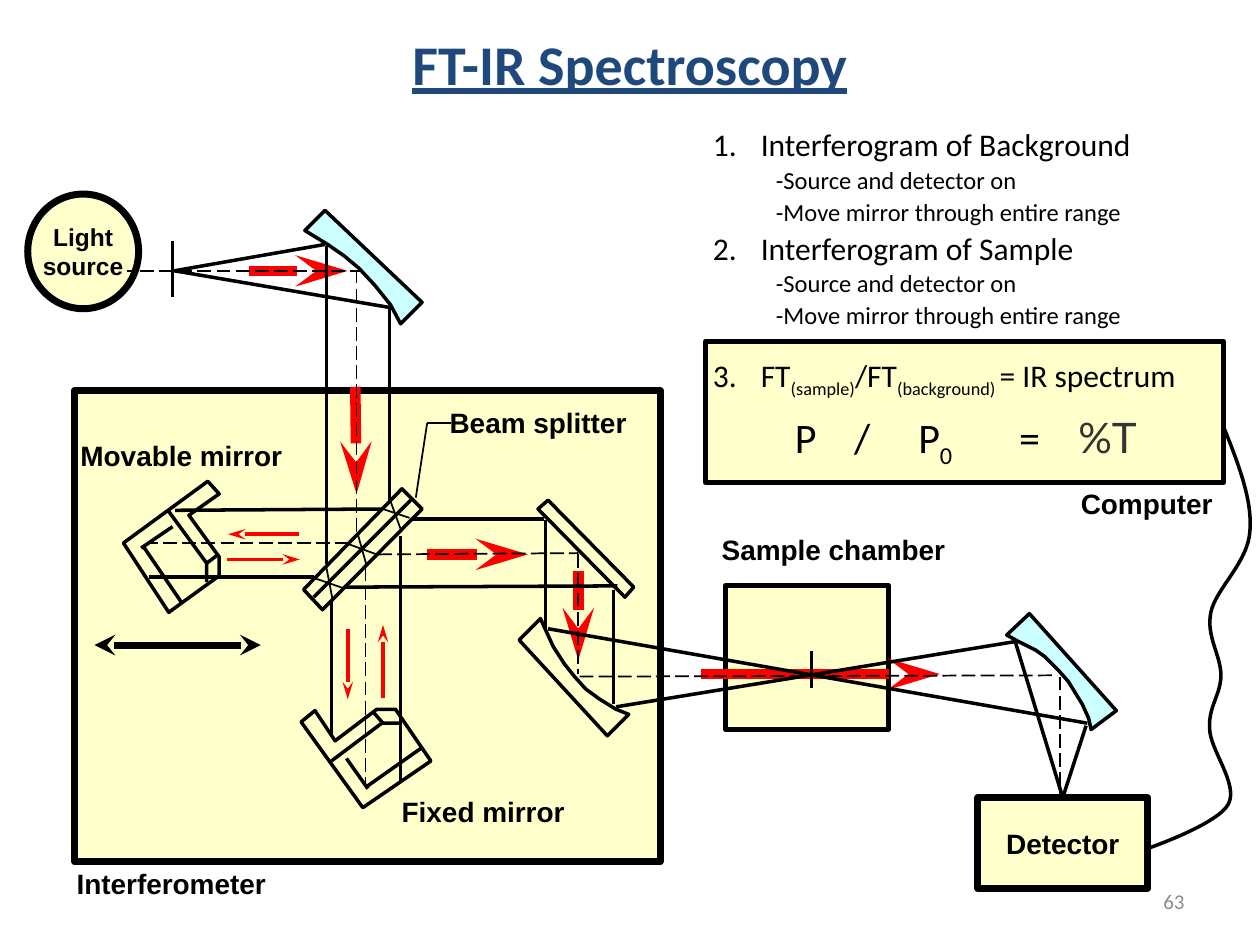
from pptx import Presentation
from pptx.dml.color import RGBColor
from pptx.enum.dml import MSO_LINE
from pptx.enum.shapes import MSO_CONNECTOR, MSO_SHAPE
from pptx.enum.text import MSO_ANCHOR, PP_ALIGN
from pptx.oxml.ns import qn
from pptx.util import Inches, Pt
from lxml import etree

STRAIGHT = MSO_CONNECTOR.STRAIGHT
RECTANGLE, OVAL = MSO_SHAPE.RECTANGLE, MSO_SHAPE.OVAL
LONG_DASH = MSO_LINE.LONG_DASH
MIDDLE, TOP = MSO_ANCHOR.MIDDLE, MSO_ANCHOR.TOP
LEFT, CENTER, RIGHT = PP_ALIGN.LEFT, PP_ALIGN.CENTER, PP_ALIGN.RIGHT
TITLE_ONLY = 5
COLUMNS = 1000  # square grid cells across the slide width

COLORS = {"ink": "000000", "title": "1F497D", "panel": "FFFFCC", "glass": "CCFFFF",
          "beam": "FF0000", "number": "8C8C8C", "percent": "333333"}


def add_text(paragraph, text, font="Calibri", size=18, color="ink", bold=False,
             underline=False, baseline=0):
    run = paragraph.add_run()
    run.text = text
    run.font.name, run.font.size = font, Pt(size)
    run.font.bold, run.font.underline = bold, underline
    run.font.color.rgb = RGBColor.from_string(COLORS[color])
    if baseline:
        run._r.get_or_add_rPr().set("baseline", str(baseline * 1000))


class Diagram:
    label_style = {"font": "Arial", "size": 16, "bold": True}

    def __init__(self, presentation):
        self.slide = presentation.slides.add_slide(presentation.slide_layouts[TITLE_ONLY])
        self.shapes = self.slide.shapes
        self.cell = presentation.slide_width // COLUMNS

    def grid(self, *cells):
        return [cell * self.cell for cell in cells]

    def outline(self, line, width, color="ink"):
        line.color.rgb = RGBColor.from_string(COLORS[color])
        line.width = Pt(width)

    def finish(self, shape, fill, width):
        shape.shadow.inherit = False
        if fill:
            shape.fill.solid()
            shape.fill.fore_color.rgb = RGBColor.from_string(COLORS[fill])
        else:
            shape.fill.background()
        self.outline(shape.line, width)
        return shape

    def title(self, text, box):
        shape = self.shapes.title
        shape.left, shape.top, shape.width, shape.height = self.grid(*box)
        shape.text_frame.vertical_anchor = MIDDLE
        paragraph = shape.text_frame.paragraphs[0]
        paragraph.alignment = CENTER
        add_text(paragraph, text, size=32, color="title", bold=True, underline=True)

    def panel(self, box, width, kind=RECTANGLE, lines=(), size=16):
        shape = self.finish(self.shapes.add_shape(kind, *self.grid(*box)), "panel", width)
        frame = shape.text_frame
        frame.word_wrap, frame.vertical_anchor = False, MIDDLE
        for index, text in enumerate(lines):
            paragraph = frame.add_paragraph() if index else frame.paragraphs[0]
            paragraph.alignment = CENTER
            add_text(paragraph, text, **{**self.label_style, "size": size})
        return shape

    def text_box(self, box, anchor=TOP, align=LEFT):
        frame = self.shapes.add_textbox(*self.grid(*box)).text_frame
        frame.word_wrap, frame.vertical_anchor = True, anchor
        frame.paragraphs[0].alignment = align
        return frame

    def label(self, text, box):
        add_text(self.text_box(box).paragraphs[0], text, **self.label_style)

    def line(self, ends, width=2, color="ink", dashed=False):
        connector = self.shapes.add_connector(STRAIGHT, *self.grid(*ends))
        self.outline(connector.line, width, color)
        if dashed:
            connector.line.dash_style = LONG_DASH
        etree.SubElement(connector._element.spPr, qn("a:effectLst"))
        return connector

    def arrow(self, ends, width, color="beam", length="lg", both=False):
        connector = self.line(ends, width, color)
        for end in ("headEnd", "tailEnd") if both else ("tailEnd",):
            etree.SubElement(connector.line._get_or_add_ln(), qn(f"a:{end}"),
                             type="stealth", w="med", len=length)

    def polygon(self, points, fill=None, closed=True):
        builder = self.shapes.build_freeform(*points[0], scale=float(self.cell))
        builder.add_line_segments(points[1:], close=closed)
        return self.finish(builder.convert_to_shape(), fill, 2)

    def curve(self, points):
        """Points are a start, then two controls and an end for each arc."""
        shape = self.polygon(points, closed=False)
        route = shape._element.find(".//" + qn("a:path"))
        segments = route.findall(qn("a:lnTo"))
        for first in range(0, len(segments), 3):
            arc = etree.SubElement(route, qn("a:cubicBezTo"))
            for segment in segments[first:first + 3]:
                arc.append(segment[0])
                route.remove(segment)


def add_steps(diagram):
    frame = diagram.text_box((556, 98, 425, 245))
    details = ["-Source and detector on", "-Move mirror through entire range"]
    ratio = [("FT", 0), ("(sample)", -25), ("/FT", 0), ("(background) ", -25),
             ("= IR spectrum", 0)]
    rows = [(0, [(f"Interferogram of {name}", 0)]) if name else (1, [(detail, 0)])
            for step in ("Background", "Sample")
            for name, detail in [(step, ""), *(("", text) for text in details)]]
    rows.append((0, ratio))
    for index, (level, runs) in enumerate(rows):
        paragraph = frame.add_paragraph() if index else frame.paragraphs[0]
        size = 14 if level else 18
        paragraph.level, paragraph.line_spacing = level, 0.9
        paragraph.space_before = Pt(0.2 * size if index else 0)
        paragraph.space_after = Pt(12 if index == len(rows) - 2 else 0)
        properties = paragraph._p.get_or_add_pPr()
        properties.set("marL", str(Inches(0.5 if level else 0.38)))
        properties.set("indent", str(Inches(0 if level else -0.38)))
        if not level:
            etree.SubElement(properties, qn("a:buAutoNum"), type="arabicPeriod")
        for text, baseline in runs:
            add_text(paragraph, text, size=size, baseline=baseline)


def add_ratio(diagram):
    paragraph = diagram.text_box((621, 322, 292, 50)).paragraphs[0]
    tabs = etree.SubElement(paragraph._p.get_or_add_pPr(), qn("a:tabLst"))
    for stop in (0.47, 0.98, 1.78, 2.25):
        etree.SubElement(tabs, qn("a:tab"), pos=str(Inches(stop)), algn="l")
    add_text(paragraph, "P\t/\tP", size=24)
    add_text(paragraph, "0", size=24, baseline=-25)
    add_text(paragraph, "\t=\t", size=24)
    add_text(paragraph, "%T", font="Lato", size=24, color="percent")


def main():
    presentation = Presentation()
    presentation.slide_width, presentation.slide_height = Inches(10), Inches(7.5)
    diagram = Diagram(presentation)
    diagram.title("FT-IR Spectroscopy", (50, 0, 900, 100))

    # Cable from the computer to the detector
    diagram.curve([(970, 336), (982, 366), (994, 396), (992, 421), (991, 446), (965, 467),
                   (961, 486), (957, 505), (969, 520), (969, 536), (969, 551), (959, 561),
                   (960, 578), (960, 595), (983, 622), (975, 638), (967, 654), (912, 673),
                   (912, 673)])

    # Instrument boxes
    diagram.panel((560, 271, 411, 112), 3)
    diagram.panel((576, 465, 129, 114), 3)
    diagram.panel((59, 310, 465, 374), 4)
    diagram.panel((22, 154, 88, 91), 4, OVAL, ["Light", "source"], 14)
    detector = diagram.panel((776, 633, 135, 72), 4, lines=["Detector"])

    # Direction of the light, and travel of the movable mirror
    for ends in [(180, 444, 238, 444), (304, 554, 304, 496), (237, 424, 181, 424),
                 (276, 499, 276, 555)]:
        diagram.arrow(ends, 2)
    for ends in [(339, 440, 419, 440), (459, 453, 459, 524), (556, 535, 746, 535),
                 (282, 307, 283, 392), (198, 215, 276, 215)]:
        diagram.arrow(ends, 6)
    diagram.arrow((207, 512, 75, 512), 4, "ink", "med", both=True)

    # Fixed mirror
    diagram.polygon([(239, 573), (288, 641), (342, 604), (314, 563), (299, 563), (266, 588),
                     (250, 564)])
    diagram.polygon([(263, 604), (303, 574), (318, 574)], closed=False)
    # Movable mirror
    diagram.polygon([(165, 382), (98, 431), (134, 486), (174, 457), (174, 442), (150, 409),
                     (174, 392)])
    diagram.polygon([(134, 406), (164, 447), (164, 462)], closed=False)
    # Inner edges of both mirrors
    for ends in [(275, 602, 292, 626), (290, 625, 334, 594), (304, 574, 297, 566),
                 (137, 418, 112, 435), (114, 434, 144, 478), (164, 447, 172, 441)]:
        diagram.line(ends)

    # Beam splitter, flat mirror and curved mirrors
    diagram.polygon([(319, 388), (335, 404), (256, 484), (241, 468)])
    diagram.line((249, 474, 327, 396))
    diagram.polygon([(435, 397), (503, 466), (496, 474), (427, 404)])
    diagram.polygon([(499, 567), (482, 584), (412, 508), (429, 491), (434, 502), (439, 513),
                     (448, 527), (456, 537), (465, 547), (476, 555), (489, 563)])
    diagram.polygon([(799, 504), (817, 487), (886, 564), (866, 579), (864, 570), (859, 559),
                     (848, 541), (841, 533), (829, 521), (822, 516), (808, 509)], "glass")

    # Edges of the beam, with the slits at the source and in the sample chamber
    for ends in [(258, 194, 138, 215), (309, 244, 139, 215), (137, 191, 137, 236),
                 (259, 195, 259, 448), (309, 244, 309, 398), (139, 405, 303, 404),
                 (118, 458, 249, 458), (263, 477, 263, 584), (318, 425, 318, 620),
                 (327, 412, 432, 412), (274, 466, 490, 465), (433, 413, 433, 499),
                 (487, 468, 487, 559), (489, 561, 807, 509), (435, 499, 863, 574),
                 (644, 517, 644, 546)]:
        diagram.line(ends)
    for start in [(806, 510), (862, 576)]:
        diagram.line((*start, 842, 633)).end_connect(detector, 0)

    # Optical axis
    for ends in [(289, 215, 101, 215), (283, 214, 283, 423), (277, 431, 118, 431),
                 (290, 450, 290, 622), (300, 440, 459, 439), (459, 440, 459, 535),
                 (460, 537, 839, 536), (841, 537, 841, 633)]:
        diagram.line(ends, 1, dashed=True)

    # Refraction inside the splitter, and the leader of its label
    for ends in [(277, 432, 299, 440), (284, 424, 291, 449), (250, 459, 273, 467),
                 (304, 404, 325, 411), (259, 450, 264, 476), (310, 398, 318, 420),
                 (330, 395, 339, 336), (339, 336, 358, 336)]:
        diagram.line(ends, 1)

    # Mirror at the source, in front of the beam
    diagram.polygon([(242, 183), (258, 167), (335, 240), (318, 257), (310, 242), (298, 227),
                     (285, 213), (273, 203), (260, 194)], "glass")

    # Labels
    for text, left, top, width in [
            ("Interferometer", 51, 683, 193), ("Fixed mirror", 309, 626, 170),
            ("Movable mirror", 54, 343, 205), ("Sample chamber", 563, 418, 224),
            ("Beam splitter", 347, 317, 182), ("Computer", 848, 381, 126)]:
        diagram.label(text, (left, top, width, 40))

    # Procedure, ratio and page number
    add_steps(diagram)
    add_ratio(diagram)
    number = diagram.text_box((717, 695, 233, 40), MIDDLE, RIGHT)
    add_text(number.paragraphs[0], "63", size=12, color="number")

    presentation.save("out.pptx")


if __name__ == "__main__":
    main()
